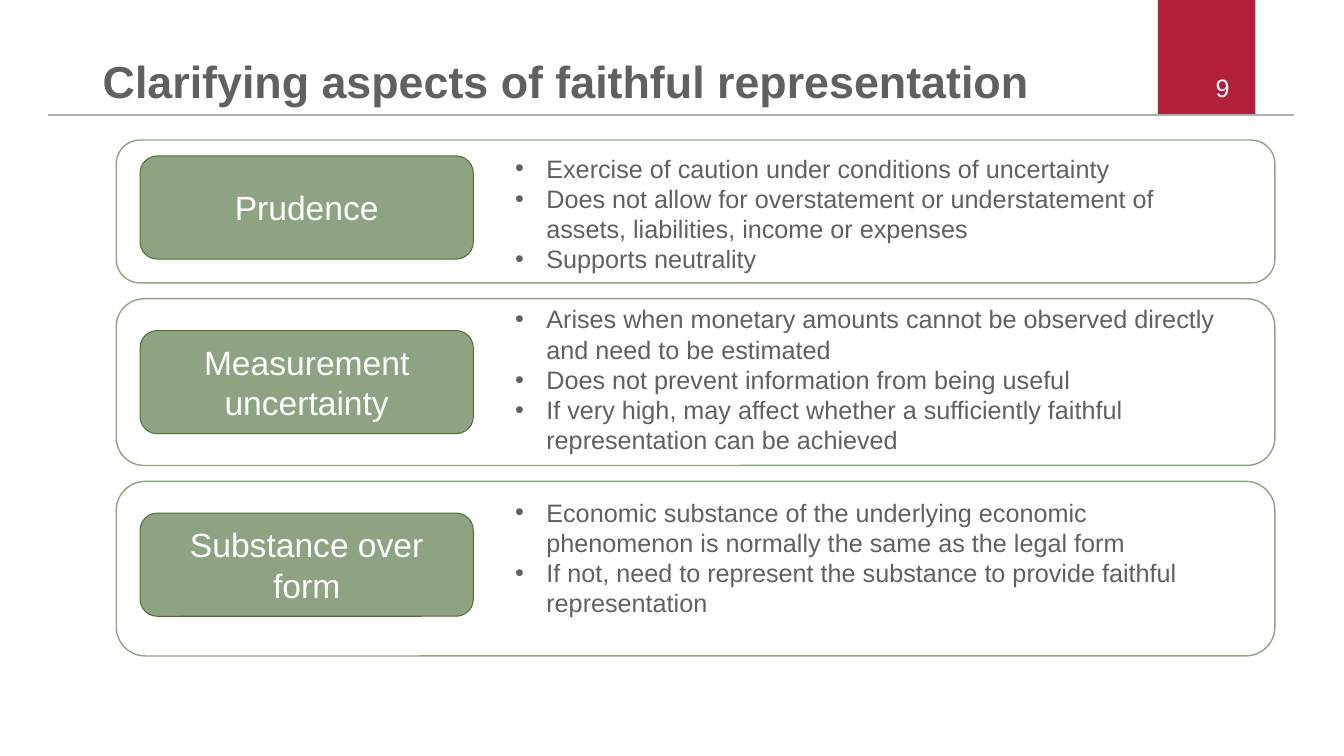
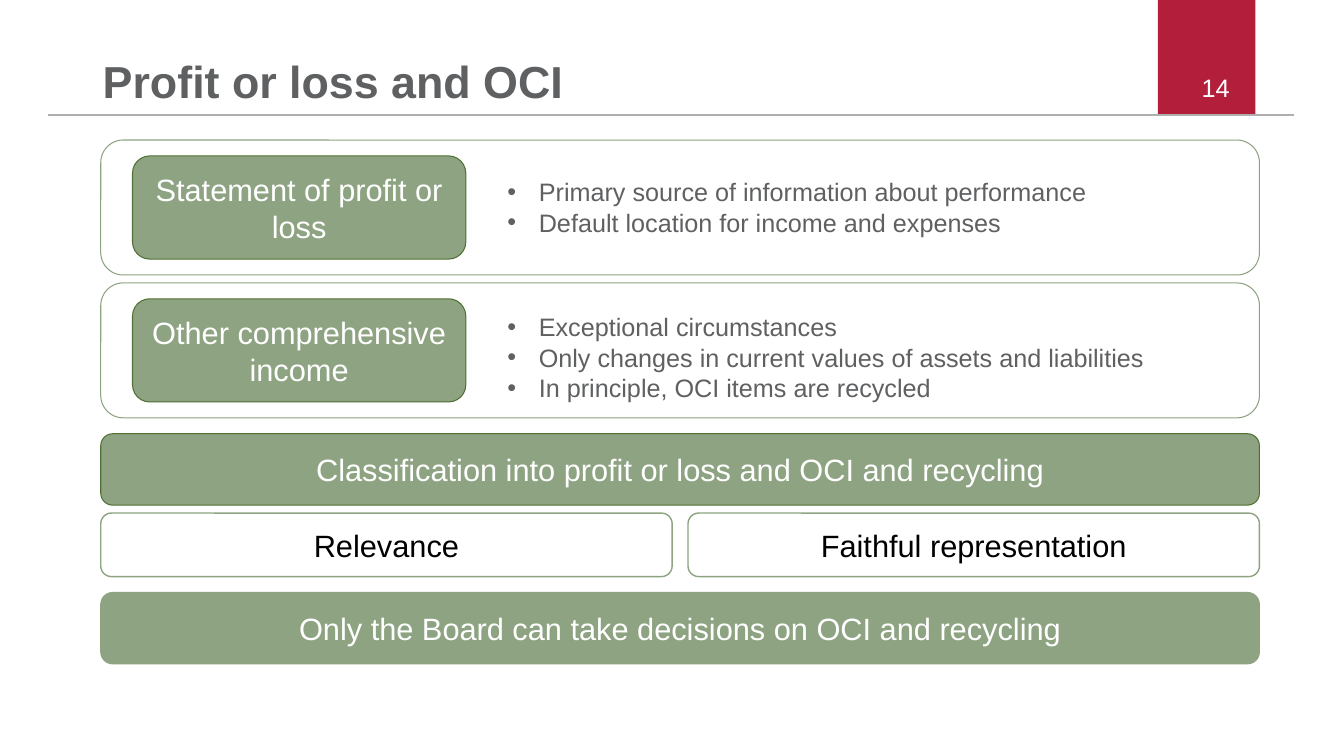
import dataclasses

import lxml.etree
import pptx
import pptx.dml.color
import pptx.enum.shapes
import pptx.enum.text
import pptx.oxml.ns
import pptx.util

Cm = pptx.util.Cm
Pt = pptx.util.Pt
RGB = pptx.dml.color.RGBColor.from_string
Shape = pptx.enum.shapes.MSO_SHAPE
Align = pptx.enum.text.PP_ALIGN
Anchor = pptx.enum.text.MSO_ANCHOR
qn = pptx.oxml.ns.qn


@dataclasses.dataclass(frozen=True)
class Theme:
    font: str = "Arial"
    red: str = "B31E3B"
    green: str = "8DA381"
    dark_green: str = "4F7032"
    grey: str = "5F6062"
    rule_grey: str = "AFAFB0"
    white: str = "FFFFFF"
    black: str = "000000"
    title_size: int = 32
    large_label_size: int = 24
    label_size: int = 22
    body_size: int = 18


@dataclasses.dataclass(frozen=True)
class Panel:
    """A labelled row; the insets are measured in cm from the panel's top."""
    label: str
    bullets: tuple
    height: float
    label_inset: float
    bullets_inset: float
    bullets_height: float


THEME = Theme()

# Layout in cm
CONTENT_TOP = 3.53
CONTENT_WIDTH = 29.2
GAP = 0.4
SMALL_GAP = 0.2
LABEL_WIDTH, LABEL_HEIGHT = 8.4, 2.6
BULLETS_OFFSET, BULLETS_WIDTH = 9.2, 18.4
BULLET_INDENT = 0.79
BANNER_HEIGHT, CRITERION_HEIGHT = 1.8, 1.6

FAITHFUL_PANELS = (
    Panel("Prudence", (
        "Exercise of caution under conditions of uncertainty",
        "Does not allow for overstatement or understatement of assets, "
        "liabilities, income or expenses",
        "Supports neutrality",
    ), 3.6, 0.4, 0.2, 3.33),
    Panel("Measurement uncertainty", (
        "Arises when monetary amounts cannot be observed directly and need "
        "to be estimated",
        "Does not prevent information from being useful",
        "If very high, may affect whether a sufficiently faithful "
        "representation can be achieved",
    ), 4.2, 0.8, 0, 4.1),
    Panel("Substance over form", (
        "Economic substance of the underlying economic phenomenon is "
        "normally the same as the legal form",
        "If not, need to represent the substance to provide faithful "
        "representation",
    ), 4.4, 0.8, 0.27, 3.33),
)

INCOME_PANELS = (
    Panel("Statement of profit or loss", (
        "Primary source of information about performance",
        "Default location for income and expenses",
    ), 3.4, 0.4, 0.8, 1.8),
    Panel("Other comprehensive income", (
        "Exceptional circumstances",
        "Only changes in current values of assets and liabilities",
        "In principle, OCI items are recycled",
    ), 3.4, 0.4, 0.6, 2.57),
)


def style_paragraph(paragraph, size, color, align=Align.LEFT, bold=False):
    paragraph.alignment = align
    for run in paragraph.runs:
        run.font.name = THEME.font
        run.font.size = Pt(size)
        run.font.bold = bold
        run.font.color.rgb = RGB(color)


def add_text_box(slide, left, top, width, height, anchor):
    box = slide.shapes.add_textbox(Cm(left), Cm(top), Cm(width), Cm(height))
    frame = box.text_frame
    frame.word_wrap = True
    frame.vertical_anchor = anchor
    return frame


def add_block(slide, left, top, width, height, fill=None, line=None,
              line_width=0.75, preset=Shape.ROUNDED_RECTANGLE):
    shape = slide.shapes.add_shape(
        preset, Cm(left), Cm(top), Cm(width), Cm(height))
    shape.shadow.inherit = False
    if fill:
        shape.fill.solid()
        shape.fill.fore_color.rgb = RGB(fill)
    else:
        shape.fill.background()
    if line:
        shape.line.color.rgb = RGB(line)
        shape.line.width = Pt(line_width)
    else:
        shape.line.fill.background()
    return shape


def add_label(slide, text, left, top, width, height, size=THEME.label_size,
              color=THEME.white, fill=THEME.green, line=THEME.dark_green,
              line_width=0.75):
    shape = add_block(slide, left, top, width, height, fill, line, line_width)
    frame = shape.text_frame
    frame.word_wrap = True
    frame.vertical_anchor = Anchor.MIDDLE
    frame.text = text
    style_paragraph(frame.paragraphs[0], size, color, Align.CENTER)


def add_bullets(slide, items, left, top, width, height):
    frame = add_text_box(slide, left, top, width, height, Anchor.TOP)
    frame.text = "\n".join(items)
    for paragraph in frame.paragraphs:
        properties = paragraph._p.get_or_add_pPr()
        properties.set("marL", str(Cm(BULLET_INDENT)))
        properties.set("indent", str(-Cm(BULLET_INDENT)))
        lxml.etree.SubElement(properties, qn("a:buFont"), typeface=THEME.font)
        lxml.etree.SubElement(properties, qn("a:buChar"), char="•")
        style_paragraph(paragraph, THEME.body_size, THEME.grey)


def add_panels(slide, panels, left, label_inset, gap, label_size, line_width):
    """Stack the panels and return the bottom of the last one in cm."""
    top = CONTENT_TOP
    label_left = left + label_inset
    for panel in panels:
        add_block(slide, left, top, CONTENT_WIDTH, panel.height,
                  line=THEME.green, line_width=line_width)
        add_label(slide, panel.label, label_left, top + panel.label_inset,
                  LABEL_WIDTH, LABEL_HEIGHT, label_size)
        add_bullets(slide, panel.bullets, label_left + BULLETS_OFFSET,
                    top + panel.bullets_inset, BULLETS_WIDTH,
                    panel.bullets_height)
        top += panel.height + gap
    return top - gap


def add_header_rule(slide):
    rule = slide.shapes.add_connector(
        pptx.enum.shapes.MSO_CONNECTOR.STRAIGHT,
        Cm(1.22), Cm(2.9), Cm(32.61), Cm(2.9))
    rule.line.color.rgb = RGB(THEME.rule_grey)
    rule.line.width = Pt(1.2)
    lxml.etree.SubElement(rule._element.spPr, qn("a:effectLst"))


def add_title(slide, title):
    frame = add_text_box(slide, 2.59, 0, 25.1, 2.72, Anchor.BOTTOM)
    frame.margin_left = frame.margin_right = 0
    frame.margin_top = frame.margin_bottom = 0
    frame.text = title
    paragraph = frame.paragraphs[0]
    paragraph.line_spacing = 0.9
    style_paragraph(paragraph, THEME.title_size, THEME.grey, bold=True)


def add_page_number(slide, number):
    frame = add_text_box(slide, 23.34, 1.7, 7.9, 1.02, Anchor.MIDDLE)
    frame.text = str(number)
    style_paragraph(frame.paragraphs[0], THEME.body_size, THEME.white,
                    Align.RIGHT)


def add_content_slide(presentation, title, number):
    """Add a blank slide with the shared header."""
    slide = presentation.slides.add_slide(presentation.slide_layouts[6])
    add_block(slide, 29.18, 0, 2.46, 2.9, THEME.red, preset=Shape.RECTANGLE)
    add_header_rule(slide)
    add_page_number(slide, number)
    add_title(slide, title)
    return slide


def build_faithful_representation(presentation):
    slide = add_content_slide(
        presentation, "Clarifying aspects of faithful representation", 9)
    add_panels(slide, FAITHFUL_PANELS, left=2.93, label_inset=0.6, gap=GAP,
               label_size=THEME.large_label_size, line_width=1)


def build_profit_or_loss(presentation):
    slide = add_content_slide(presentation, "Profit or loss and OCI", 14)
    left = 2.54
    bottom = add_panels(slide, INCOME_PANELS, left, label_inset=0.8,
                        gap=SMALL_GAP, label_size=THEME.label_size,
                        line_width=0.75)

    banner_top = bottom + GAP
    add_label(slide, "Classification into profit or loss and OCI and recycling",
              left, banner_top, CONTENT_WIDTH, BANNER_HEIGHT)

    criteria_top = banner_top + BANNER_HEIGHT + SMALL_GAP
    criterion_width = (CONTENT_WIDTH - GAP) / 2
    for column, text in enumerate(("Relevance", "Faithful representation")):
        add_label(slide, text, left + column * (criterion_width + GAP),
                  criteria_top, criterion_width, CRITERION_HEIGHT,
                  color=THEME.black, fill=None, line=THEME.green, line_width=1)

    add_label(slide, "Only the Board can take decisions on OCI and recycling",
              left, criteria_top + CRITERION_HEIGHT + GAP, CONTENT_WIDTH,
              BANNER_HEIGHT, line=THEME.green)


def main():
    presentation = pptx.Presentation()
    presentation.slide_width = Cm(33.87)
    presentation.slide_height = Cm(19.05)
    build_faithful_representation(presentation)
    build_profit_or_loss(presentation)
    presentation.save("out.pptx")


if __name__ == "__main__":
    main()
